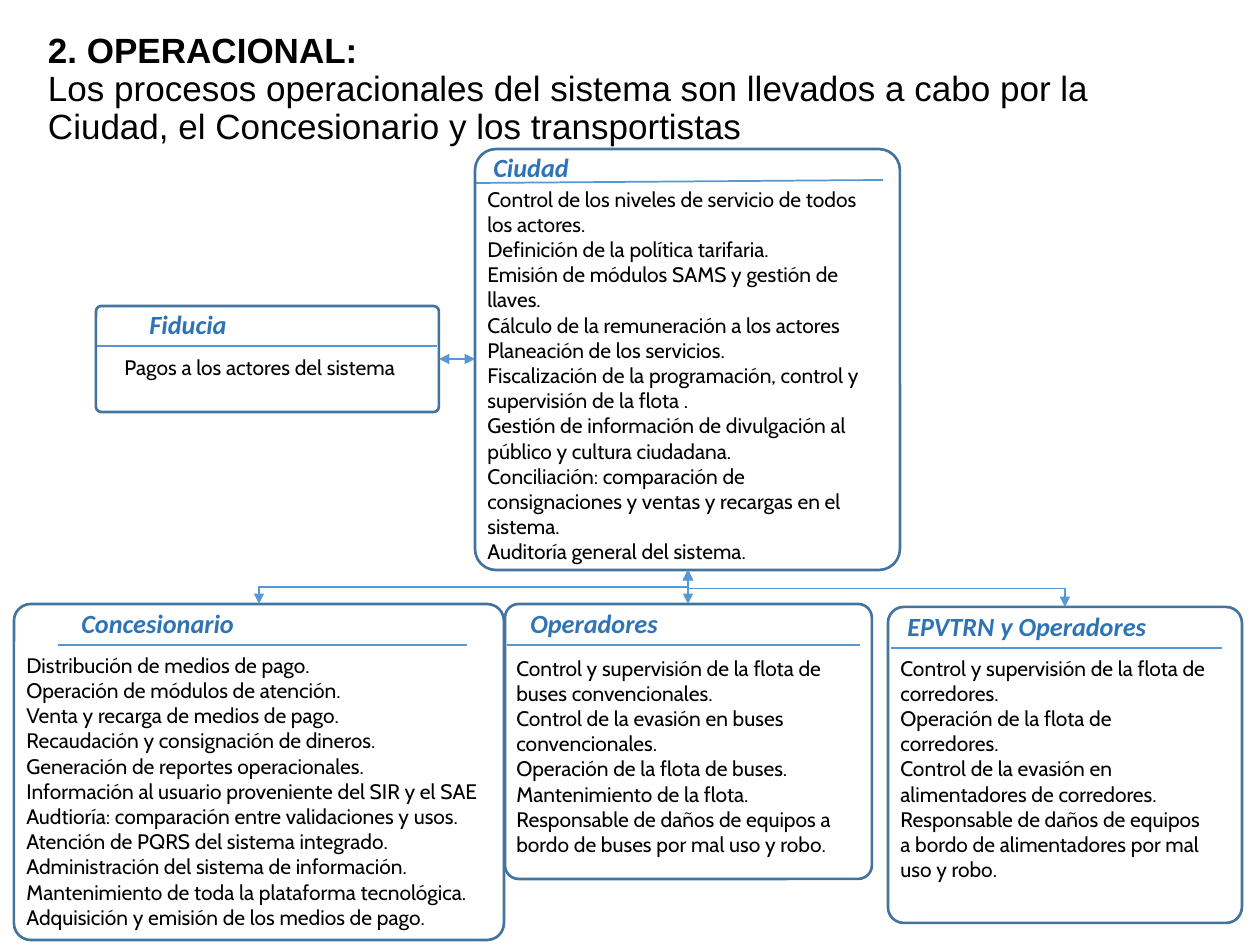
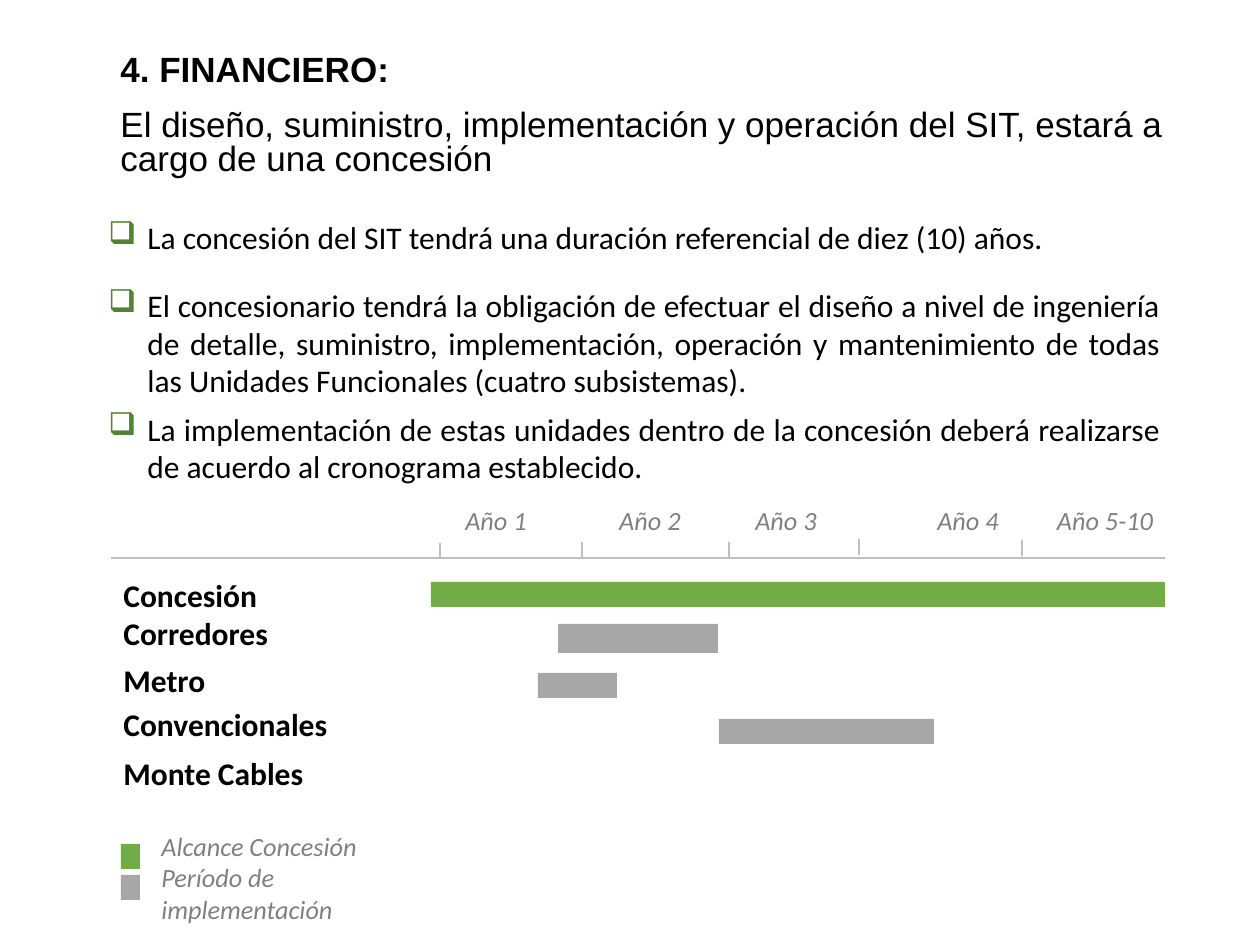
import pptx
import pptx.util
import pptx.dml.color
import pptx.enum.shapes
import pptx.enum.text
import pptx.oxml.ns
from dataclasses import dataclass
from lxml import etree

PX = 914400 / 126
SLIDE = (1260, 945)
SHAPES = pptx.enum.shapes.MSO_SHAPE
CONNECTORS = pptx.enum.shapes.MSO_CONNECTOR
ALIGN = pptx.enum.text.PP_ALIGN
ANCHOR = pptx.enum.text.MSO_ANCHOR
qn = pptx.oxml.ns.qn


@dataclass(frozen=True)
class Theme:
    ink: str = "000000"
    label: str = "2E74B5"
    card_edge: str = "43739E"
    link: str = "5698D3"
    grey: str = "808080"
    axis: str = "BFBFBF"
    bullet: str = "548235"
    scope: str = "70AD47"
    period: str = "A7A7A7"
    title_font: str = "Arial"
    main_font: str = "Calibri"
    body_font: str = "Cabin"
    title_size: int = 20
    main_size: int = 18
    label_size: int = 15
    body_size: int = 12


THEME = Theme()

OPERATIONS_TITLE = [
    "2. OPERACIONAL:",
    "Los procesos operacionales del sistema son llevados a cabo por la Ciudad, "
    "el Concesionario y los transportistas",
]
# box: left, top, width, height; rule: start and end; label and body: left, top, width
CARDS = [
    dict(label="Ciudad", box=(475, 149, 425, 421), rule=(475, 183, 883, 180),
         label_at=(481, 145, 115), body_at=(475, 180, 420), body=[
             "Control de los niveles de servicio de todos los actores.",
             "Definición de la política tarifaria.",
             "Emisión de módulos SAMS y gestión de llaves.",
             "Cálculo de la remuneración a los actores",
             "Planeación de los servicios.",
             "Fiscalización de la programación, control y supervisión de la flota .",
             "Gestión de información de divulgación al público y cultura ciudadana.",
             "Conciliación: comparación de consignaciones y ventas y recargas en el sistema.",
             "Auditoría general del sistema."]),
    dict(label="Fiducia", box=(96, 306, 343, 106), rule=(96, 346, 437, 346),
         label_at=(137, 302, 118), body_at=(112, 348, 324), body=[
             "Pagos a los actores del sistema"]),
    dict(label="Concesionario", box=(14, 604, 490, 336), rule=(58, 645, 467, 645),
         label_at=(69, 601, 217), body_at=(14, 646, 518), body=[
             "Distribución de medios de pago.",
             "Operación de módulos de atención.",
             "Venta y recarga de medios de pago.",
             "Recaudación y consignación de dineros.",
             "Generación de reportes operacionales.",
             "Información al usuario proveniente del SIR y el SAE",
             "Audtioría: comparación entre validaciones y usos.",
             "Atención de PQRS del sistema integrado.",
             "Administración del sistema de información.",
             "Mantenimiento de toda la plataforma tecnológica.",
             "Adquisición y emisión de los medios de pago."]),
    dict(label="Operadores", box=(505, 604, 367, 275), rule=(507, 645, 860, 645),
         label_at=(518, 601, 174), body_at=(504, 649, 355), body=[
             "Control y supervisión de la flota de buses convencionales.",
             "Control de la evasión en buses convencionales.",
             "Operación de la flota de buses.",
             "Mantenimiento de la flota.",
             "Responsable de daños de equipos a bordo de buses por mal uso y robo."]),
    dict(label="EPVTRN y Operadores", box=(888, 607, 354, 316), rule=(891, 648, 1222, 648),
         label_at=(895, 604, 328), body_at=(888, 649, 334), body=[
             "Control y supervisión de la flota de corredores.",
             "Operación de la flota de corredores.",
             "Control de la evasión en alimentadores de corredores.",
             "Responsable de daños de equipos a bordo de alimentadores por mal uso y robo."]),
]

FINANCE_TITLE = [
    "4. FINANCIERO:",
    "El diseño, suministro, implementación y operación del SIT, estará a cargo de una concesión",
]
# text, space after in points
TERMS = [
    ("La concesión del SIT tendrá una duración referencial de diez (10) años.", 17),
    ("El concesionario tendrá la obligación de efectuar el diseño a nivel de ingeniería "
     "de detalle, suministro, implementación, operación y mantenimiento de todas las "
     "Unidades Funcionales (cuatro subsistemas).", 6),
    ("La implementación de estas unidades dentro de la concesión deberá realizarse de "
     "acuerdo al cronograma establecido.", 6),
]
# label, left of label
YEARS = [("Año 1", 428), ("Año 2", 582), ("Año 3", 718), ("Año 4", 900), ("Año 5-10", 1037)]
# left, bottom
TICKS = [(440, 559), (582, 558), (729, 558), (859, 555), (1022, 556)]
# label, top of label, bar (left, top, width, height), colour
STAGES = [
    ("Concesión", 570, (431, 582, 734, 25), THEME.scope),
    ("Corredores", 608, (558, 624, 160, 29), THEME.period),
    ("Metro", 655, (538, 673, 79, 25), THEME.period),
    ("Convencionales", 699, (719, 719, 215, 25), THEME.period),
    ("Monte Cables", 748, None, None),
]
LEGEND = [("Alcance Concesión", 844, THEME.scope),
          ("Período de implementación", 875, THEME.period)]


def px(value):
    return pptx.util.Emu(round(value * PX))


def rgb(code):
    return pptx.dml.color.RGBColor.from_string(code)


def add_text(page, at, lines, font, size, color=THEME.ink, bold=False, italic=False,
             align=ALIGN.LEFT, anchor=ANCHOR.TOP):
    """Add a wrapping text box, one paragraph per line, and return its frame."""
    frame = page.shapes.add_textbox(*map(px, at)).text_frame
    frame.word_wrap = True
    frame.vertical_anchor = anchor
    frame.text = "\n".join(lines)
    for para in frame.paragraphs:
        para.alignment = align
        para.font.name, para.font.size = font, pptx.util.Pt(size)
        para.font.color.rgb = rgb(color)
        para.font.bold, para.font.italic = bold, italic
    return frame


def add_title(page, at, lines, anchor, spacing):
    """Add a slide title whose first line is bold."""
    frame = add_text(page, at, lines, THEME.title_font, THEME.title_size, anchor=anchor)
    frame.paragraphs[0].font.bold = True
    for para in frame.paragraphs:
        para.line_spacing = spacing
    return frame


def add_label(page, at, lines, **style):
    return add_text(page, at, lines, THEME.main_font, THEME.label_size, italic=True, **style)


def add_line(page, ends, color, width, arrows=False, kind=CONNECTORS.STRAIGHT):
    line = page.shapes.add_connector(kind, *map(px, ends))
    line.line.color.rgb = rgb(color)
    line.line.width = pptx.util.Pt(width)
    properties = line._element.spPr
    if arrows:
        for end in ("a:headEnd", "a:tailEnd"):
            etree.SubElement(properties.find(qn("a:ln")), qn(end), type="triangle")
    etree.SubElement(properties, qn("a:effectLst"))
    return line


def add_branch(page, start, end):
    """Link two points with an elbow that leaves and arrives vertically."""
    (start_x, start_y), (end_x, end_y) = start, end
    if start_x == end_x:
        add_line(page, (*start, *end), THEME.link, 0.75, arrows=True)
        return
    middle_x, middle_y = (start_x + end_x) / 2, (start_y + end_y) / 2
    half_drop, half_run = (end_y - start_y) / 2, (end_x - start_x) / 2
    ends = (middle_x - half_drop, middle_y + half_run,
            middle_x + half_drop, middle_y - half_run)
    elbow = add_line(page, ends, THEME.link, 0.75, arrows=True, kind=CONNECTORS.ELBOW)
    elbow._element.spPr.find(qn("a:xfrm")).set("rot", str(90 * 60000))


def add_bar(page, at, color):
    bar = page.shapes.add_shape(SHAPES.RECTANGLE, *map(px, at))
    bar.shadow.inherit = False
    bar.fill.solid()
    bar.fill.fore_color.rgb = rgb(color)
    bar.line.fill.background()


def add_card(page, card):
    add_line(page, card["rule"], THEME.link, 1)
    edge = page.shapes.add_shape(SHAPES.ROUNDED_RECTANGLE, *map(px, card["box"]))
    edge.adjustments[0] = 0.05
    edge.shadow.inherit = False
    edge.fill.background()
    edge.line.color.rgb = rgb(THEME.card_edge)
    edge.line.width = pptx.util.Pt(1.5)
    add_label(page, (*card["label_at"], 44), [card["label"]], color=THEME.label, bold=True)
    left, top, width = card["body_at"]
    height = card["box"][1] + card["box"][3] - top
    add_text(page, (left, top, width, height), card["body"], THEME.body_font, THEME.body_size)


def add_bullet(para):
    properties = para._p.get_or_add_pPr()
    properties.set("marL", str(px(76)))
    properties.set("indent", str(px(-39)))
    color = etree.SubElement(properties, qn("a:buClr"))
    etree.SubElement(color, qn("a:srgbClr"), val=THEME.bullet)
    etree.SubElement(properties, qn("a:buChar"), char="❑")


def build_operations(page):
    title = add_title(page, (42, 0, 1086, 180), OPERATIONS_TITLE, ANCHOR.MIDDLE, 0.9)
    title.margin_left = title.margin_right = px(6)
    title.margin_top = title.margin_bottom = px(6)
    for card in CARDS:
        add_card(page, card)

    city, trust, *operators = [card["box"] for card in CARDS]
    add_line(page, (trust[0] + trust[2], 359, city[0], 359), THEME.link, 0.75, arrows=True)
    hub = (city[0] + city[2] // 2 + 1, city[1] + city[3])
    for left, top, width, _ in operators:
        center = left + width // 2
        add_branch(page, hub, (hub[0] if abs(center - hub[0]) < 2 else center, top))


def build_finance(page):
    title = add_title(page, (108, 48, 1079, 136), FINANCE_TITLE, ANCHOR.BOTTOM, 0.8)
    title.paragraphs[0].space_after = pptx.util.Pt(12)

    terms = add_text(page, (59, 212, 1114, 249), [text for text, _ in TERMS],
                     THEME.main_font, THEME.main_size, align=ALIGN.JUSTIFY)
    for para, (_, gap) in zip(terms.paragraphs, TERMS):
        para.space_after = pptx.util.Pt(gap)
        add_bullet(para)

    for year, left in YEARS:
        add_label(page, (left, 498, 136, 44), [year], color=THEME.grey, align=ALIGN.CENTER)
    add_line(page, (111, 558, 1165, 558), THEME.axis, 0.75)
    for left, bottom in TICKS:
        add_line(page, (left, bottom, left, bottom - 16), THEME.axis, 0.75)

    for stage, top, bar, color in STAGES:
        add_text(page, (111, top, 246, 50), [stage], THEME.main_font, THEME.main_size, bold=True)
        if bar:
            add_bar(page, bar, color)

    for _, top, color in LEGEND:
        add_bar(page, (121, top, 19, 25), color)
    add_label(page, (149, 824, 280, 108), [text for text, _, _ in LEGEND], color=THEME.grey)


def main():
    deck = pptx.Presentation()
    deck.slide_width, deck.slide_height = map(px, SLIDE)
    blank = deck.slide_layouts[6]
    for build in (build_operations, build_finance):
        build(deck.slides.add_slide(blank))
    deck.save("out.pptx")


if __name__ == "__main__":
    main()
